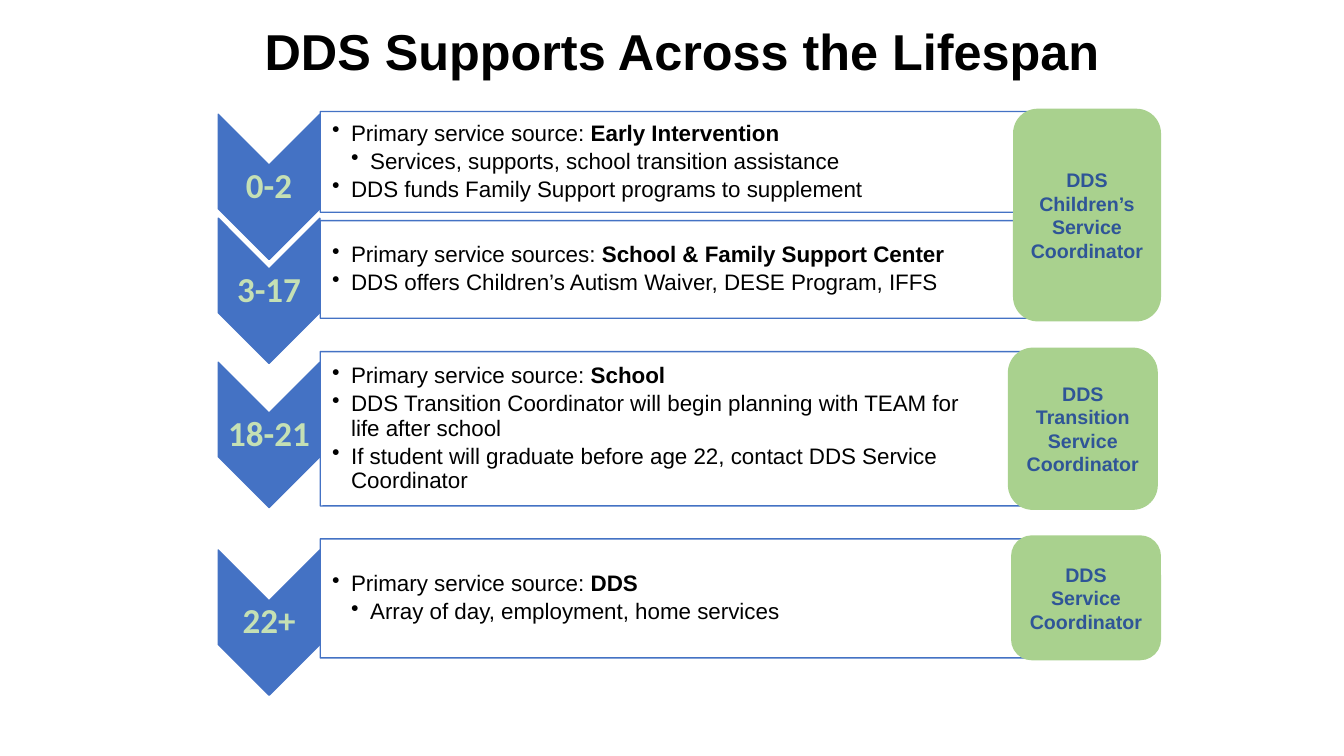
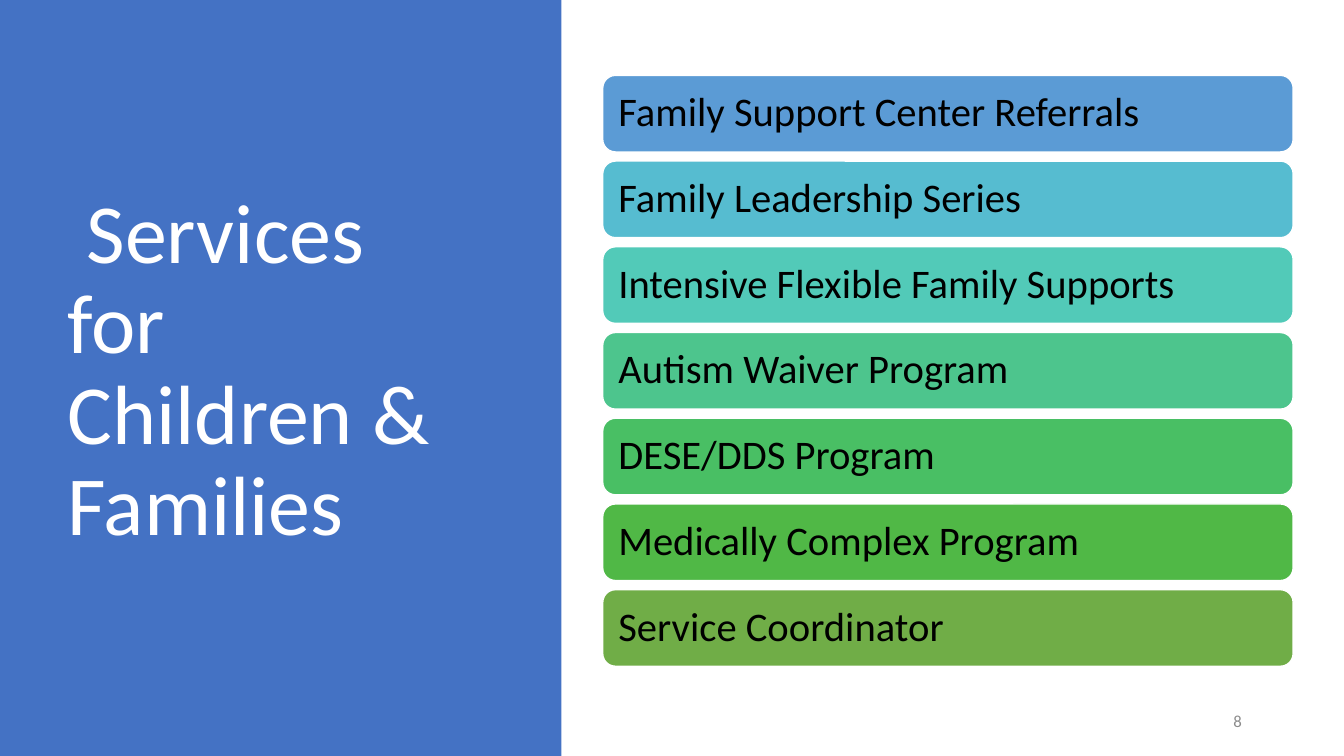
from dataclasses import dataclass

from lxml import etree
from pptx import Presentation, util as u
from pptx.dml.color import RGBColor
from pptx.enum import shapes, text
from pptx.oxml import ns

Cm, Pt = u.Cm, u.Pt
KIND = shapes.MSO_SHAPE
LEFT, MID, RIGHT = text.PP_ALIGN.LEFT, text.PP_ALIGN.CENTER, text.PP_ALIGN.RIGHT


@dataclass(frozen=True)
class Theme:
    blue: str = "4472C4"
    navy: str = "2F5597"
    green: str = "A9D18E"
    pale: str = "C5E0B4"
    white: str = "FFFFFF"
    black: str = "000000"
    gray: str = "8C8C8C"
    bars: tuple = ("5B9BD5", "56BCD0", "52CAB8", "4DC58D",
                   "49BF64", "50B846", "70AD47")
    sans: str = "Arial"
    body: str = "Calibri"
    head: int = 36
    hero: int = 60
    bar: int = 29
    age: int = 25
    item: int = 16
    role: int = 14
    foot: int = 12
    tight: float = 0.9
    step: float = 0.48


class Deck:
    def __init__(self, theme):
        self.theme = theme
        self.prs = Presentation()
        self.prs.slide_width, self.prs.slide_height = Cm(33.87), Cm(19.05)
        self.slide = None

    def start(self):
        self.slide = self.prs.slides.add_slide(self.prs.slide_layouts[5])

    def frame(self, shape, inset=None):
        tf = shape.text_frame
        tf.word_wrap = True
        tf.auto_size = text.MSO_AUTO_SIZE.NONE
        tf.vertical_anchor = text.MSO_ANCHOR.MIDDLE
        if inset is not None:
            left, rest = inset
            tf.margin_left = Cm(left)
            tf.margin_top = tf.margin_right = tf.margin_bottom = Cm(rest)
        return tf

    def runs(self, par, words, size, color, font, bold=False):
        """Add a run for each line of words; line feeds become breaks."""
        for num, line in enumerate(words.split("\n")):
            if num:
                par.add_line_break()
            run = par.add_run()
            run.text = line
            run.font.size, run.font.name, run.font.bold = Pt(size), font, bold
            run.font.color.rgb = RGBColor.from_string(color)

    def line(self, tf, words, size, color, font, align=LEFT, bold=False,
             tight=True):
        """Fill the first paragraph of a frame."""
        par = tf.paragraphs[0]
        par.alignment = align
        if tight:
            par.line_spacing = self.theme.tight
        self.runs(par, words, size, color, font, bold)
        return par

    def title(self, box, words, size, color, font, align=LEFT, bold=False):
        shape = self.slide.shapes.title
        shape.left, shape.top, shape.width, shape.height = map(Cm, box)
        tf = self.frame(shape)
        return tf, self.line(tf, words, size, color, font, align, bold)

    def shape(self, kind, box, fill, edge=None, turn=False):
        """Draw a shape in the box it covers, also when turned by 90 degrees."""
        x, y, w, h = box
        if turn:
            x, y, w, h = x + (w - h) / 2, y + (h - w) / 2, h, w
        item = self.slide.shapes.add_shape(kind, *map(Cm, (x, y, w, h)))
        item.rotation = 90 if turn else 0
        item.shadow.inherit = False
        item.fill.solid()
        item.fill.fore_color.rgb = RGBColor.from_string(fill)
        if edge:
            item.line.color.rgb = RGBColor.from_string(edge)
            item.line.width = Pt(1)
        else:
            item.line.fill.background()
        return item

    def box(self, box, inset=None):
        return self.frame(self.slide.shapes.add_textbox(*map(Cm, box)), inset)

    def age(self, top, words):
        t = self.theme
        self.shape(KIND.CHEVRON, (5.5, top, 2.56, 3.66), t.blue, t.blue, True)
        tf = self.box((5.5, top + 1.28, 2.56, 1.1), (0.05, 0.05))
        self.line(tf, words, t.age, t.pale, t.body, MID, True)

    def panel(self, top, high, items):
        t = self.theme
        self.shape(KIND.ROUND_2_SAME_RECTANGLE, (8.07, top, 20.29, high),
                   t.white, t.blue, True)
        tf = self.box((8.07, top + high * 0.05, 20.15, high * 0.9),
                      (0.3, 0.03))
        for num, (level, plain, strong) in enumerate(items):
            par = tf.add_paragraph() if num else tf.paragraphs[0]
            self.bullet(par, level)
            self.runs(par, plain, t.item, t.black, t.sans)
            if strong:
                self.runs(par, strong, t.item, t.black, t.sans, True)

    def bullet(self, par, level):
        step = Cm(self.theme.step)
        par.level = level
        par.line_spacing = self.theme.tight
        par.space_after = Pt(2.8)
        props = par._p.get_or_add_pPr()
        props.set("marL", str(step * level))
        props.set("indent", str(-step))
        etree.SubElement(props, ns.qn("a:buChar")).set("char", "•")

    def role(self, box, lines):
        t = self.theme
        tf = self.frame(self.shape(KIND.ROUNDED_RECTANGLE, box, t.green))
        for num, words in enumerate(lines):
            par = tf.add_paragraph() if num else tf.paragraphs[0]
            par.alignment = MID
            self.runs(par, words, t.role, t.navy, t.sans, True)

    def bar(self, top, words, fill):
        t = self.theme
        item = self.shape(KIND.ROUNDED_RECTANGLE, (15.19, top, 17.4, 1.93),
                          fill, t.white)
        self.line(self.frame(item, (0.3, 0.3)), words, t.bar, t.black, t.body)


# Age, chevron top, panel top, panel height, bullets (level, plain, bold)
STAGES = [
    ("0-2", 2.88, 2.81, 2.54, [
        (1, "Primary service source: ", "Early Intervention"),
        (2, "Services, supports, school transition assistance", ""),
        (1, "DDS funds Family Support programs to supplement", "")]),
    ("3-17", 5.5, 5.56, 2.46, [
        (1, "Primary service sources: ", "School & Family Support Center"),
        (1, "DDS offers Children’s Autism Waiver, DESE Program, IFFS", "")]),
    ("18-21", 9.13, 8.86, 3.89, [
        (1, "Primary service source: ", "School"),
        (1, "DDS Transition Coordinator will begin planning with TEAM for"
            "\nlife after school", ""),
        (1, "If student will graduate before age 22, contact DDS Service"
            "\nCoordinator", "")]),
    ("22+", 13.86, 13.58, 3, [
        (1, "Primary service source: ", "DDS"),
        (2, "Array of day, employment, home services", "")]),
]
ROLES = [
    ((25.53, 2.74, 3.73, 5.36), ["DDS Children’s Service", "Coordinator"]),
    ((25.4, 8.76, 3.78, 4.09), ["DDS Transition Service", "Coordinator"]),
    ((25.48, 13.49, 3.78, 3.15), ["DDS\nService\nCoordinator"]),
]
SERVICES = [
    "Family Support Center Referrals", "Family Leadership Series",
    "Intensive Flexible Family Supports", "Autism Waiver Program",
    "DESE/DDS Program", "Medically Complex Program", "Service Coordinator",
]


def lifespan(deck):
    t = deck.theme
    deck.start()
    tf, _ = deck.title((4.34, 0.64, 24.92, 1.47),
                       "DDS Supports Across the Lifespan",
                       t.head, t.black, t.sans, MID, True)
    tf.margin_left = Cm(1.04)
    for age, tip, top, high, items in STAGES:
        deck.age(tip, age)
        deck.panel(top, high, items)
    for box, lines in ROLES:
        deck.role(box, lines)


def services(deck):
    t = deck.theme
    deck.start()
    side = deck.shape(KIND.RECTANGLE, (0, 0, 14.15, 19.05), t.blue)
    title = deck.slide.shapes.title
    title.element.addprevious(side.element)
    _, par = deck.title((1.45, 1.73, 10.57, 15.29),
                        "Services for Children & Families",
                        t.hero, t.white, t.body)
    par._p.get_or_add_pPr().set("indent", str(Cm(t.step)))
    deck.line(deck.box((23.93, 17.65, 7.62, 1.02)), "8",
              t.foot, t.gray, t.body, RIGHT, tight=False)
    for num, (words, fill) in enumerate(zip(SERVICES, t.bars)):
        deck.bar(1.9 + 2.16 * num, words, fill)


def main():
    deck = Deck(Theme())
    lifespan(deck)
    services(deck)
    deck.prs.save("out.pptx")


if __name__ == "__main__":
    main()
